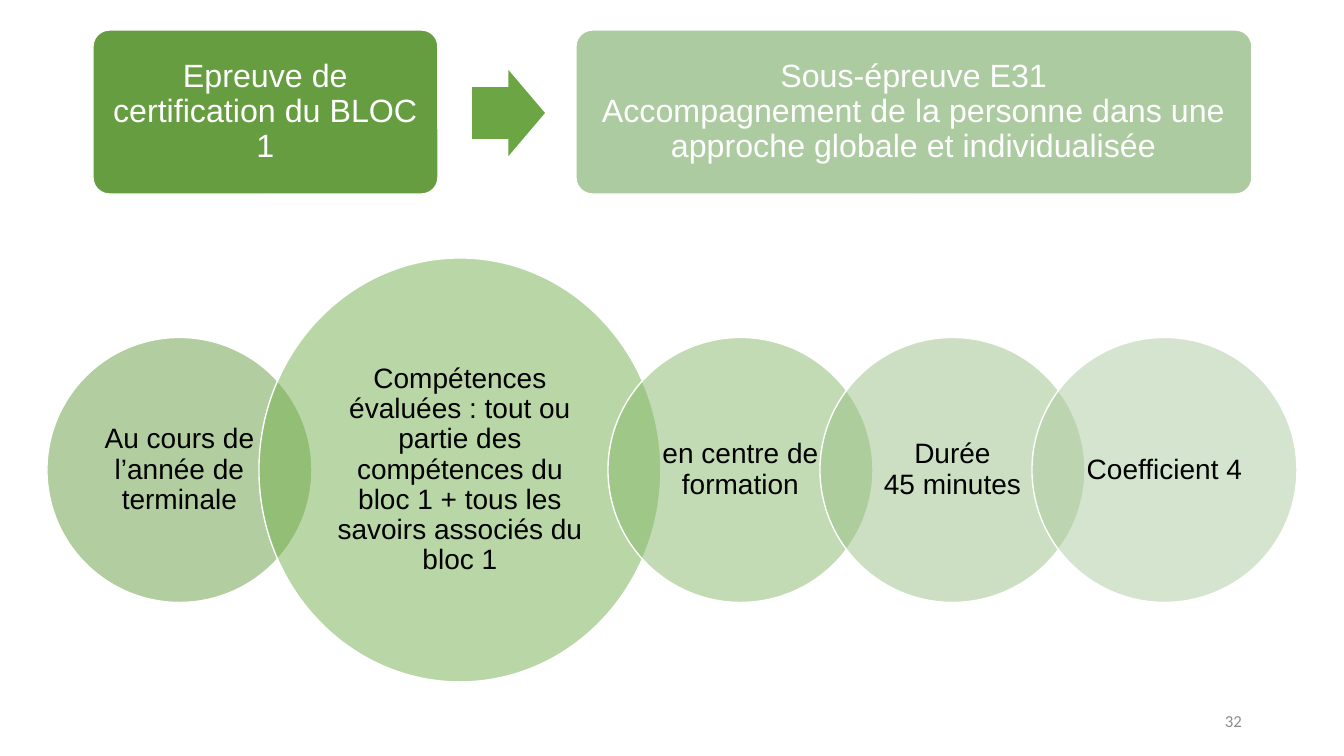
"""Build the slide presenting the certification test of block 1."""
from lxml import etree
from pptx import Presentation
from pptx.dml.color import RGBColor
from pptx.enum.shapes import MSO_SHAPE
from pptx.enum.text import MSO_ANCHOR, PP_ALIGN
from pptx.oxml.ns import qn
from pptx.util import Emu, Pt

ROUNDED, ARROW, OVAL = MSO_SHAPE.ROUNDED_RECTANGLE, MSO_SHAPE.RIGHT_ARROW, MSO_SHAPE.OVAL
CENTER, RIGHT = PP_ALIGN.CENTER, PP_ALIGN.RIGHT
MIDDLE = MSO_ANCHOR.MIDDLE

BANNERS = [
    ("Epreuve de certification du BLOC 1", 93, 345, "669D40"),
    ("Sous-épreuve E31\nAccompagnement de la personne dans une "
     "approche globale et individualisée", 576, 676, "ADCBA0"),
]
CIRCLES = [
    ("Au cours de l’année de terminale", 265, 265, "669D40"),
    ("Compétences évaluées : tout ou partie des compétences du bloc 1 "
     "+ tous les savoirs associés du bloc 1", 402, 424, "75B14F"),
    ("en centre de formation", 265, 265, "87B86B"),
    ("Durée\n45 minutes", 265, 265, "9AC186"),
    ("Coefficient 4", 265, 265, "ADCBA0"),
]
PAGE_NUMBER = "32"

BANNER_TOP, BANNER_HEIGHT = 30, 164
CIRCLES_LEFT, CIRCLES_MIDDLE, OVERLAP = 47, 470, 53


def px(length):
    return Emu(round(length * 914400 / 100.8))


def color(code):
    return RGBColor.from_string(code)


def write(shape, text, size=20, font="Arial", ink="000000", align=CENTER,
          spacing=0.9, inset=(14, 3)):
    frame = shape.text_frame
    frame.word_wrap = True
    frame.vertical_anchor = MIDDLE
    frame.margin_left = frame.margin_right = px(inset[0])
    frame.margin_top = frame.margin_bottom = px(inset[1])
    paragraph = frame.paragraphs[0]
    paragraph.text = text.replace("\n", "\v")
    paragraph.alignment = align
    paragraph.line_spacing = spacing
    for run in paragraph.runs:
        run.font.size = Pt(size)
        run.font.name = font
        run.font.color.rgb = color(ink)


def draw(kind, left, top, width, height, fill, outlined=True, opacity=100):
    shape = slide.shapes.add_shape(kind, px(left), px(top), px(width), px(height))
    shape.shadow.inherit = False
    shape.fill.solid()
    shape.fill.fore_color.rgb = color(fill)
    if opacity < 100:
        tint = shape.fill._xPr.find(qn("a:solidFill"))[0]
        etree.SubElement(tint, qn("a:alpha")).set("val", str(opacity * 1000))
    if outlined:
        shape.line.color.rgb = color("FFFFFF")
        shape.line.width = Pt(1)
    else:
        shape.line.fill.background()
    return shape


deck = Presentation()
deck.slide_width, deck.slide_height = px(1344), px(756)
slide = deck.slides.add_slide(deck.slide_layouts[6])

for text, left, width, fill in BANNERS:
    banner = draw(ROUNDED, left, BANNER_TOP, width, BANNER_HEIGHT, fill)
    banner.adjustments[0] = 0.1
    write(banner, text, size=23, ink="FFFFFF", inset=(10, 10))

arrow = draw(ARROW, 472, 70, 73, 86, "6BA544", outlined=False)
arrow.adjustments[0] = 0.6
arrow.adjustments[1] = 0.5

left = CIRCLES_LEFT
for text, width, height, fill in CIRCLES:
    circle = draw(OVAL, left, CIRCLES_MIDDLE - height / 2, width, height, fill, opacity=50)
    write(circle, text)
    left += width - OVERLAP

page = slide.shapes.add_textbox(px(950), px(701), px(302), px(40))
write(page, PAGE_NUMBER, size=12, font="Calibri", ink="8C8C8C", align=RIGHT,
      spacing=1.0, inset=(10, 5))

deck.save("out.pptx")
